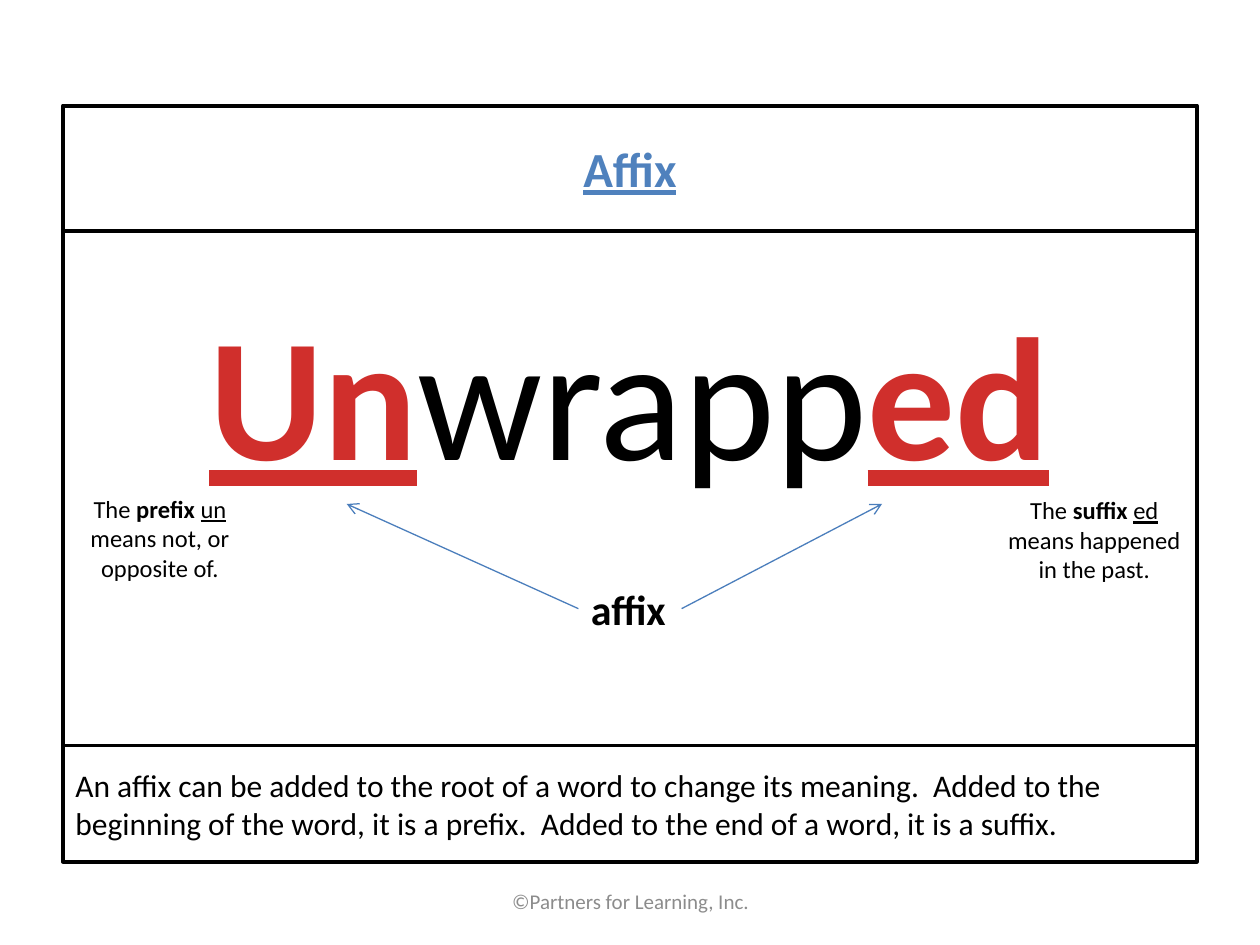
from dataclasses import dataclass

from lxml.etree import SubElement
from pptx import Presentation
from pptx.dml.color import RGBColor
from pptx.enum.shapes import MSO_CONNECTOR, MSO_SHAPE
from pptx.enum.text import MSO_ANCHOR as Anchor, PP_ALIGN as Align
from pptx.oxml.ns import qn
from pptx.shapes.autoshape import Shape
from pptx.slide import Slide
from pptx.util import Cm, Pt

BLACK, RED, BLUE, ARROW_BLUE, GREY = "000000", "D02F2C", "4F81BD", "4B7EBC", "8C8C8C"
LEFT_SIDE, RIGHT_SIDE = 1, 3


@dataclass(frozen=True)
class Box:
    left: float
    top: float
    width: float
    height: float

    def lengths(self) -> tuple[Cm, ...]:
        return tuple(Cm(value) for value in (self.left, self.top, self.width, self.height))


@dataclass(frozen=True)
class Piece:
    """A stretch of text in one style."""
    text: str
    bold: bool = False
    underline: bool = False
    color: str = BLACK


@dataclass(frozen=True)
class Label:
    box: Box
    size: int
    pieces: list[Piece]
    align: Align = Align.CENTER
    anchor: Anchor = Anchor.TOP
    wrap: bool = True


@dataclass(frozen=True)
class Panel:
    height: float
    size: int = 18
    pieces: tuple[Piece, ...] = ()
    align: Align = Align.LEFT


def rgb(color: str) -> RGBColor:
    return RGBColor.from_string(color)


def write(shape: Shape, pieces: list[Piece], size: int, align: Align, anchor: Anchor) -> None:
    shape.text_frame.vertical_anchor = anchor
    paragraph = shape.text_frame.paragraphs[0]
    paragraph.alignment = align
    paragraph.font.name = "Calibri"
    paragraph.font.size = Pt(size)
    for piece in pieces:
        run = paragraph.add_run()
        run.text = piece.text
        run.font.bold = piece.bold
        run.font.underline = piece.underline
        run.font.color.rgb = rgb(piece.color)


def draw_panel(slide: Slide, panel: Panel, top: float) -> None:
    shape = slide.shapes.add_shape(
        MSO_SHAPE.RECTANGLE, *Box(1.27, top, 22.86, panel.height).lengths())
    shape.shadow.inherit = False
    shape.fill.background()
    shape.line.color.rgb = rgb(BLACK)
    shape.line.width = Pt(2.25)
    if panel.pieces:
        write(shape, panel.pieces, panel.size, panel.align, Anchor.MIDDLE)


def draw_label(slide: Slide, label: Label) -> Shape:
    shape = slide.shapes.add_textbox(*label.box.lengths())
    shape.text_frame.word_wrap = label.wrap
    write(shape, label.pieces, label.size, label.align, label.anchor)
    return shape


def draw_arrow(slide: Slide, source: Shape, side: int, x: float, y: float) -> None:
    """Draw an arrow from the middle of a side of the source to a point."""
    arrow = slide.shapes.add_connector(MSO_CONNECTOR.STRAIGHT, 0, 0, Cm(x), Cm(y))
    arrow.begin_connect(source, side)
    arrow.line.color.rgb = rgb(ARROW_BLUE)
    arrow.line.width = Pt(0.75)
    SubElement(arrow.line._get_or_add_ln(), qn("a:tailEnd"), type="arrow")
    SubElement(arrow._element.spPr, qn("a:effectLst"))


PANELS = [
    Panel(2.52, 28, (Piece("Affix", True, True, BLUE),), Align.CENTER),
    Panel(10.38),
    Panel(2.34, 18, (Piece(
        "An affix can be added to the root of a word to change its meaning.  "
        "Added to the beginning of the word, it is a prefix.  "
        "Added to the end of a word, it is a suffix."),)),
]
LABELS = [
    Label(Box(8.69, 17.65, 8.05, 1.02), 12,
          [Piece("©Partners for Learning, Inc.", color=GREY)], anchor=Anchor.MIDDLE),
    Label(Box(3.89, 5.64, 17.6, 4.52), 100,
          [Piece("Un", True, True, RED), Piece("wrapp"), Piece("ed", True, True, RED)],
          wrap=False),
    Label(Box(1.27, 9.83, 3.91, 2.06), 14,
          [Piece("The "), Piece("prefix ", bold=True), Piece("un", underline=True),
           Piece(" means not, or opposite of.")]),
    Label(Box(19.99, 9.86, 4.14, 2.06), 14,
          [Piece("The "), Piece("suffix ", bold=True), Piece("ed ", underline=True),
           Piece("means happened in the past.")]),
]
AFFIX = Label(Box(11.66, 11.63, 2.08, 1.28), 24, [Piece("affix", bold=True)],
              Align.LEFT, wrap=False)


def main() -> None:
    presentation = Presentation()
    presentation.slide_width, presentation.slide_height = Cm(25.4), Cm(19.05)
    slide = presentation.slides.add_slide(presentation.slide_layouts[6])

    top = 2.13
    for panel in PANELS:
        draw_panel(slide, panel, top)
        top += panel.height
    for label in LABELS:
        draw_label(slide, label)

    affix = draw_label(slide, AFFIX)
    draw_arrow(slide, affix, LEFT_SIDE, 6.99, 10.16)
    draw_arrow(slide, affix, RIGHT_SIDE, 17.78, 10.16)
    presentation.save("out.pptx")


if __name__ == "__main__":
    main()
